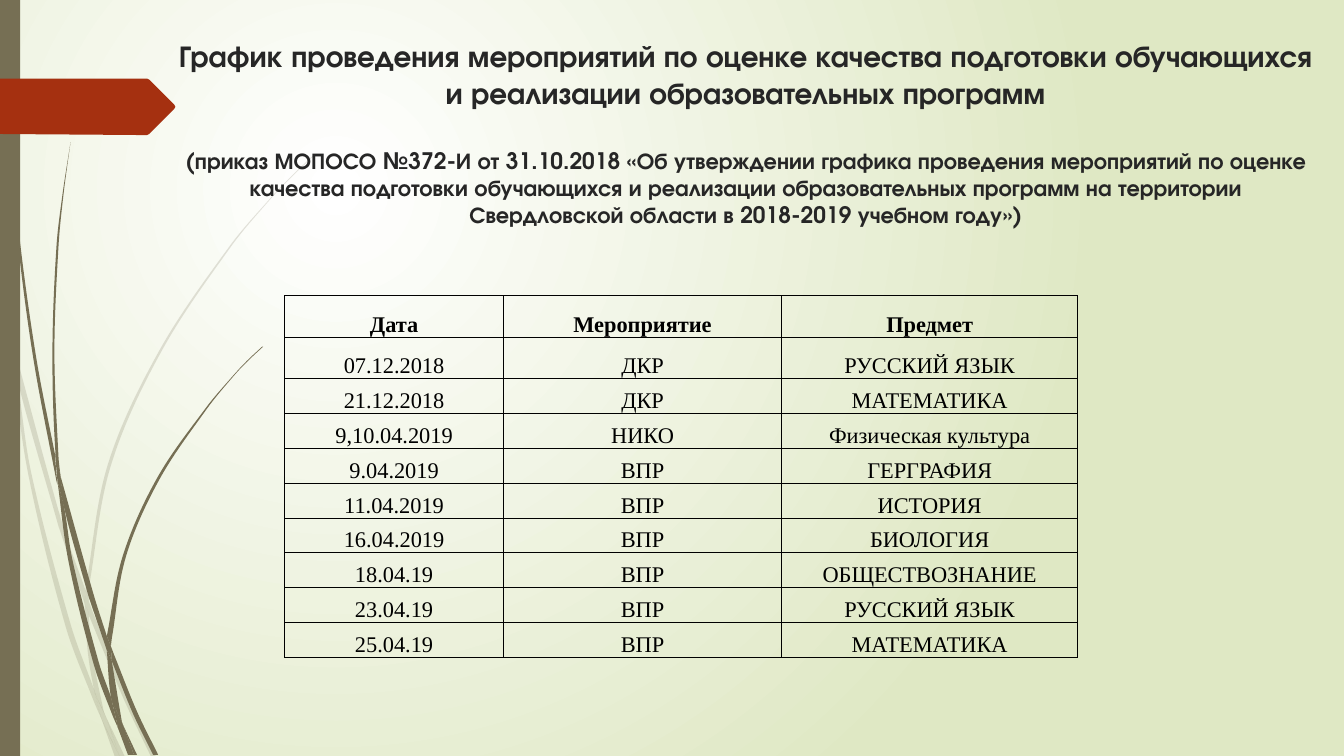
from math import hypot

from lxml import etree
from pptx import Presentation
from pptx.dml.color import RGBColor
from pptx.enum import shapes, text
from pptx.oxml import parse_xml
from pptx.oxml.ns import nsdecls, qn
from pptx.util import Pt

WHITE = RGBColor(0xFF, 0xFF, 0xFF)
PALE_GREEN = RGBColor(0xDF, 0xE8, 0xC4)
OLIVE = RGBColor(0x76, 0x6F, 0x54)
RED = RGBColor(0xA5, 0x30, 0x10)
CHARCOAL = RGBColor(0x26, 0x26, 0x26)
BLACK = RGBColor(0, 0, 0)
TITLE_FONT = "TeX Gyre Adventor"
TABLE_FONT = "Times New Roman"
UNIT = 72  # points per unit of the outlines below

# Each blade of grass is a closed loop of smooth edges that meet in corners;
# an edge starts where the one before it ends.
FADED_BLADES = [
    [[(0.11, 3.5), (0.09, 3.22), (0, 2.82)], [(0, 2.99)], [(0.1, 3.44), (0.11, 3.5)]],
    [[(0.58, 5.22), (0.84, 5.99)], [(0.85, 5.86)], [(0.62, 5.2), (0.14, 3.45)],
     [(0.17, 3.76), (0.58, 5.22)]],
    [[(0.92, 6.07), (0.88, 5.96)], [(0.88, 6.1)], [(1.23, 6.94), (1.5, 7.51)],
     [(1.55, 7.51)], [(1.27, 6.92), (0.92, 6.07)]],
    [[(1.19, 7.51), (1.24, 7.51)], [(1.05, 7.11)], [(1.19, 7.51)]],
    [[(0.93, 6.83), (0.7, 6.19), (0.31, 4.69), (0.17, 3.76), (0.11, 3.5)],
     [(0.28, 4.7), (0.65, 6.21), (0.92, 6.93), (1.01, 7.14)],
     [(0.99, 7.07), (0.93, 6.83)]],
    [[(0.84, 5.99), (0.87, 6.46), (0.93, 6.83), (0.96, 6.92), (1.05, 7.11)],
     [(1.03, 7.06), (0.91, 6.46), (0.88, 6.1), (0.88, 6.08)], [(0.84, 5.99)]],
    [[(0.88, 5.84), (1.1, 4.62), (1.6, 3.49), (2.29, 2.45), (2.68, 1.98),
      (2.9, 1.75), (3.12, 1.54)], [(3.12, 1.53)],
     [(2.89, 1.75), (2.68, 1.97), (2.28, 2.44), (1.58, 3.48), (1.07, 4.61),
      (0.85, 5.84), (0.85, 5.86)], [(0.88, 5.96)], [(0.88, 5.84)]],
    [[(1.01, 7.14), (1.14, 7.51)], [(1.19, 7.51)], [(1.01, 7.14)]],
    [[(0.88, 6.08), (0.88, 6.1)], [(0.88, 5.96)], [(0.85, 5.86)],
     [(0.84, 5.99)], [(0.88, 6.08)]],
    [[(0.96, 6.92), (0.93, 6.83)], [(0.99, 7.07), (1.01, 7.14), (1.19, 7.51)],
     [(1.05, 7.11), (0.96, 6.92)]],
]
BLADES = [
    [[(0.07, 1.1), (0.17, 2.33), (0.33, 3.55), (0.56, 4.77), (0.57, 4.81)],
     [(0.55, 4.57), (0.55, 4.53)],
     [(0.36, 3.55), (0.19, 2.32), (0.08, 1.09), (0.05, 0.48), (0.04, 0)],
     [(0.03, 0)], [(0.04, 0.48), (0.07, 1.1)]],
    [[(0.88, 5.92), (1.06, 6.45)], [(1.06, 6.33), (1.06, 6.31)],
     [(0.93, 5.9), (0.6, 4.72)], [(0.64, 5.05), (0.88, 5.92)]],
    [[(1.13, 6.49), (1.1, 6.41)], [(1.11, 6.56)], [(1.32, 7.08), (1.52, 7.49)],
     [(1.57, 7.49)], [(1.36, 7.06), (1.13, 6.49)]],
    [[(1.1, 6.91), (0.98, 6.57), (0.72, 5.56), (0.64, 5.05), (0.57, 4.77)],
     [(0.68, 5.57), (0.93, 6.59), (1.11, 7.08), (1.17, 7.22)],
     [(1.16, 7.17), (1.1, 6.91)]],
    [[(0.6, 4.72), (0.58, 4.53), (0.54, 3.49), (0.58, 2.45), (0.63, 1.93),
      (0.7, 1.41)],
     [(0.62, 1.93), (0.56, 2.45), (0.52, 3.49), (0.55, 4.49), (0.6, 4.72)]],
    [[(1.33, 7.49), (1.36, 7.49)], [(1.22, 7.19)], [(1.33, 7.49)]],
    [[(0.57, 4.77), (0.64, 5.05)], [(0.6, 4.72)], [(0.55, 4.49)],
     [(0.55, 4.53), (0.57, 4.77)]],
    [[(1.11, 6.33), (1.25, 5.52), (1.58, 4.76), (2.05, 4.06), (2.31, 3.74),
      (2.45, 3.59), (2.61, 3.44)], [(2.6, 3.44)],
     [(2.45, 3.58), (2.31, 3.73), (2.04, 4.05), (1.56, 4.74), (1.22, 5.51),
      (1.06, 6.31)], [(1.1, 6.41)], [(1.11, 6.33)]],
    [[(1.17, 7.22), (1.27, 7.49)], [(1.31, 7.49)], [(1.17, 7.22)]],
    [[(1.06, 6.45), (1.1, 6.91), (1.16, 7.06), (1.22, 7.19)],
     [(1.21, 7.16), (1.11, 6.56)], [(1.09, 6.51), (1.06, 6.45)]],
    [[(1.06, 6.45), (1.09, 6.51), (1.11, 6.56)], [(1.1, 6.41)], [(1.06, 6.31)],
     [(1.06, 6.33), (1.06, 6.45)]],
    [[(1.16, 7.06), (1.1, 6.91)], [(1.16, 7.17), (1.17, 7.22), (1.3, 7.49)],
     [(1.33, 7.49)], [(1.22, 7.19), (1.16, 7.06)]],
]
ARROW = [[(1.73, 1.08), (1.48, 1.33)], [(1.46, 1.34)], [(1.36, 1.34)], [(0, 1.33)],
         [(0, 0.78)], [(1.36, 0.78)], [(1.46, 0.78)], [(1.48, 0.79)], [(1.73, 1.04)],
         [(1.74, 1.06), (1.73, 1.08)]]

HEADING = ("График проведения мероприятий по оценке качества подготовки "
           "обучающихся и реализации образовательных программ")
ORDER = ("(приказ МОПОСО №372-И от 31.10.2018 «Об утверждении графика проведения "
         "мероприятий по оценке качества подготовки обучающихся и реализации "
         "образовательных программ на территории Свердловской области "
         "в 2018-2019 учебном году»)")
SCHEDULE = [
    ("Дата", "Мероприятие", "Предмет"),
    ("07.12.2018", "ДКР", "РУССКИЙ ЯЗЫК"),
    ("21.12.2018", "ДКР", "МАТЕМАТИКА"),
    ("9,10.04.2019", "НИКО", "Физическая культура"),
    ("9.04.2019", "ВПР", "ГЕРГРАФИЯ"),
    ("11.04.2019", "ВПР", "ИСТОРИЯ"),
    ("16.04.2019", "ВПР", "БИОЛОГИЯ"),
    ("18.04.19", "ВПР", "ОБЩЕСТВОЗНАНИЕ"),
    ("23.04.19", "ВПР", "РУССКИЙ ЯЗЫК"),
    ("25.04.19", "ВПР", "МАТЕМАТИКА"),
]
COLUMN_WIDTHS = (156.4, 198.6, 211.6)
ROW_HEIGHTS = [30, 29.4] + [24.9] * 8


def write(paragraph, words, font, size, color, bold=False, before=0):
    paragraph.alignment = text.PP_ALIGN.CENTER
    paragraph.space_before = Pt(before)
    run = paragraph.add_run()
    run.text = words
    run.font.name = font
    run.font.size = Pt(size)
    run.font.bold = bold
    run.font.color.rgb = color


def paint(shape, color, alpha=100):
    shape.shadow.inherit = False
    shape.line.fill.background()
    shape.fill.solid()
    shape.fill.fore_color.rgb = color
    if alpha < 100:
        srgb = shape._element.spPr.find(".//" + qn("a:srgbClr"))
        etree.SubElement(srgb, qn("a:alpha"), val=str(alpha * 1000))


def paint_background(slide):
    fill = slide.background.fill
    fill.gradient()
    for stop, color in zip(fill.gradient_stops, (WHITE, PALE_GREEN)):
        stop.color.rgb = color
    lin = slide._element.find(".//" + qn("a:lin"))
    lin.getparent().replace(lin, parse_xml(
        f'<a:path {nsdecls("a")} path="circle"><a:fillToRect l="50000" t="50000" '
        'r="100000" b="100000"/></a:path>'))


def curve_handles(edge):
    """Return the two Bezier handles of each span, along the neighbours' direction."""
    slopes = []
    for (x0, y0), (x1, y1) in zip([edge[0], *edge], [*edge[1:], edge[-1]]):
        length = hypot(x1 - x0, y1 - y0)
        slopes.append(((x1 - x0) / length, (y1 - y0) / length))
    handles = []
    for (x0, y0), (x1, y1), (u0, v0), (u1, v1) in zip(edge, edge[1:], slopes, slopes[1:]):
        reach = hypot(x1 - x0, y1 - y0) / 3
        handles.append([(x0 + u0 * reach, y0 + v0 * reach),
                        (x1 - u1 * reach, y1 - v1 * reach)])
    return handles


def add_outline(slide, loop, color, alpha=100):
    edges = [[(Pt(x * UNIT), Pt(y * UNIT)) for x, y in edge] for edge in loop]
    points = [point for edge in edges for point in edge]
    handles = curve_handles(edges[0])
    for previous, edge in zip(edges, edges[1:]):
        handles += curve_handles([previous[-1], *edge])
    builder = slide.shapes.build_freeform(*points[0])
    builder.add_line_segments(points[1:])
    outline = builder.convert_to_shape()
    for line, pair in zip(list(outline._element.iter(qn("a:lnTo"))), handles):
        line.tag = qn("a:cubicBezTo")
        for index, (x, y) in enumerate(pair):
            line.insert(index, line.makeelement(qn("a:pt"), {
                "x": str(round(x - outline.left)), "y": str(round(y - outline.top))}))
    paint(outline, color, alpha)


def add_side_bar(slide):
    bar = slide.shapes.add_shape(
        shapes.MSO_SHAPE.RECTANGLE, 0, 0, Pt(14.4), Pt(540))
    paint(bar, OLIVE)


def add_heading(slide):
    title = slide.shapes.title
    title.left, title.top, title.width, title.height = Pt(116.2), Pt(23.3), Pt(833), Pt(141)
    slide.shapes._spTree.append(title._element)  # in front of the grass
    frame = title.text_frame
    frame.word_wrap = True
    frame.auto_size = text.MSO_AUTO_SIZE.NONE
    frame.vertical_anchor = text.MSO_ANCHOR.TOP
    write(frame.paragraphs[0], HEADING, TITLE_FONT, 21.6, CHARCOAL, bold=True)
    write(frame.add_paragraph(), ORDER, TITLE_FONT, 16.2, CHARCOAL, bold=True, before=26)


def outline_cell(cell):
    properties = cell._tc.get_or_add_tcPr()
    for index, side in enumerate(("lnL", "lnR", "lnT", "lnB")):
        properties.insert(index, parse_xml(
            f'<a:{side} {nsdecls("a")} w="{Pt(0.5)}"><a:solidFill>'
            f'<a:srgbClr val="{BLACK}"/></a:solidFill></a:{side}>'))


def add_schedule(slide):
    table = slide.shapes.add_table(
        len(SCHEDULE), len(COLUMN_WIDTHS), Pt(203.3), Pt(211),
        Pt(sum(COLUMN_WIDTHS)), Pt(sum(ROW_HEIGHTS))).table
    table.first_row = table.horz_banding = False
    for column, width in zip(table.columns, COLUMN_WIDTHS):
        column.width = Pt(width)
    for row, height, entries in zip(table.rows, ROW_HEIGHTS, SCHEDULE):
        row.height = Pt(height)
        for cell, entry in zip(row.cells, entries):
            cell.fill.background()
            cell.vertical_anchor = text.MSO_ANCHOR.BOTTOM
            cell.margin_left = cell.margin_right = cell.margin_top = Pt(0.7)
            cell.margin_bottom = 0
            outline_cell(cell)
            write(cell.text_frame.paragraphs[0], entry, TABLE_FONT, 16, BLACK,
                  bold=entries is SCHEDULE[0])


def main():
    deck = Presentation()
    deck.slide_width, deck.slide_height = Pt(960), Pt(540)
    slide = deck.slides.add_slide(deck.slide_layouts[5])
    paint_background(slide)
    for blade in FADED_BLADES:
        add_outline(slide, blade, OLIVE, alpha=20)
    for blade in BLADES:
        add_outline(slide, blade, OLIVE)
    add_side_bar(slide)
    add_outline(slide, ARROW, RED)
    add_heading(slide)
    add_schedule(slide)
    deck.save("out.pptx")


if __name__ == "__main__":
    main()
